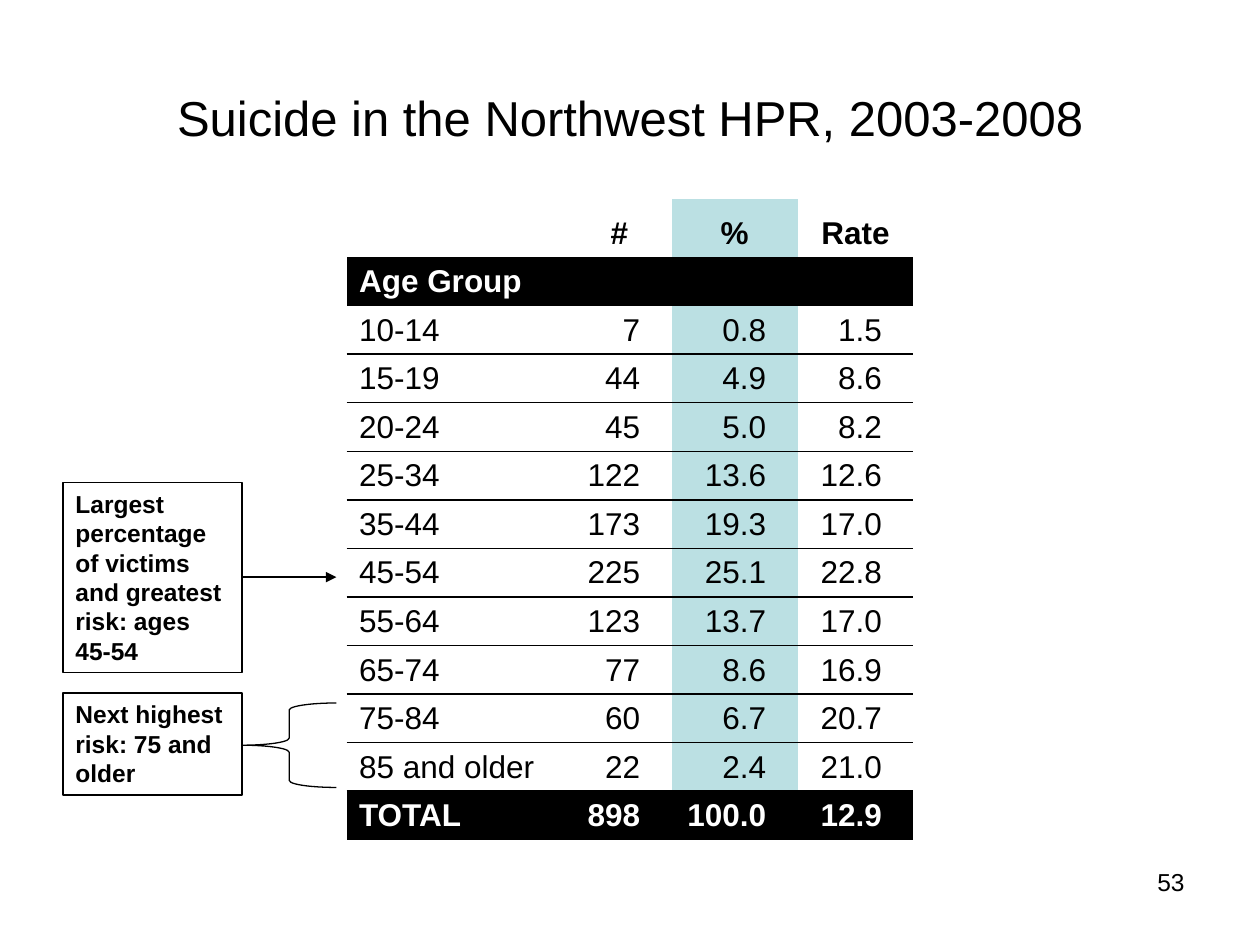
import pptx
import pptx.util
import pptx.dml.color
import pptx.enum.text
import pptx.enum.shapes
import pptx.oxml
import pptx.oxml.ns

Inches, Pt = pptx.util.Inches, pptx.util.Pt
ALIGN = pptx.enum.text.PP_ALIGN
ANCHOR = pptx.enum.text.MSO_ANCHOR
SHAPE = pptx.enum.shapes.MSO_SHAPE

COLORS = {"black": "000000", "white": "FFFFFF", "teal": "BBE0E3"}
FONT = "Arial"
NO_STYLE = "{2D5ABB26-0587-4C30-8999-92F81FD0307C}"

TITLE = "Suicide in the Northwest HPR, 2003-2008"
NUMBER = "53"
HEAD = ("", "#", "%", "Rate")
BAND = ("Age Group", "", "", "")
AGES = [
    ("10-14", "7", "0.8", "1.5"),
    ("15-19", "44", "4.9", "8.6"),
    ("20-24", "45", "5.0", "8.2"),
    ("25-34", "122", "13.6", "12.6"),
    ("35-44", "173", "19.3", "17.0"),
    ("45-54", "225", "25.1", "22.8"),
    ("55-64", "123", "13.7", "17.0"),
    ("65-74", "77", "8.6", "16.9"),
    ("75-84", "60", "6.7", "20.7"),
    ("85 and older", "22", "2.4", "21.0"),
]
TOTAL = ("TOTAL", "898", "100.0", "12.9")
NOTES = [
    ("Next highest risk: 75 and older", 5.5, 0.81),
    ("Largest percentage of victims and greatest risk: ages 45-54", 3.83, 1.51),
]
WIDTHS = (1.75, 0.83, 1, 0.92)
HEIGHTS = [0.46] + [0.3] * (len(AGES) + 1) + [0.36]
NOTE_X, NOTE_W = 0.5, 1.42
LINK_X, LINK_W = NOTE_X + NOTE_W, 0.75


def rgb(name):
    return pptx.dml.color.RGBColor.from_string(COLORS[name])


def write(frame, text, size, align=ALIGN.LEFT, bold=False, color="black", before=0):
    """Add one run; before is the space above as a share of a line."""
    par = frame.paragraphs[0]
    par.alignment = align
    if before:
        par._p.get_or_add_pPr().get_or_add_spcBef().set_spcPct(before)
    run = par.add_run()
    run.text = text
    font = run.font
    font.name, font.size, font.bold = FONT, Pt(size), bold
    font.color.rgb = rgb(color)
    return par


def label(slide, text, box, size, align, anchor):
    frame = slide.shapes.add_textbox(*map(Inches, box)).text_frame
    frame.word_wrap = True
    frame.vertical_anchor = anchor
    write(frame, text, size, align)


def outline(shape):
    shape.shadow.inherit = False
    shape.fill.background()
    shape.line.color.rgb = rgb("black")
    shape.line.width = Pt(0.75)


def border(cell, sides):
    """Rule the named sides in black and clear the others."""
    props = cell._tc.get_or_add_tcPr()
    for spot, side in enumerate("LRTB"):
        paint = (f'<a:solidFill><a:srgbClr val="{COLORS["black"]}"/></a:solidFill>'
                 if side in sides else "<a:noFill/>")
        props.insert(spot, pptx.oxml.parse_xml(
            f'<a:ln{side} {pptx.oxml.ns.nsdecls("a")} w="{Pt(1)}">{paint}</a:ln{side}>'))


def fill_cell(cell, text, row, col):
    head, band, total = row == 0, row == 1, row == len(HEIGHTS) - 1
    dark = band or total
    cell.vertical_anchor = ANCHOR.BOTTOM
    if dark or col == 2:
        cell.fill.solid()
        cell.fill.fore_color.rgb = rgb("black" if dark else "teal")
    else:
        cell.fill.background()
    border(cell, "" if head or band else "T" if total else "B" if row == 2 else "TB")
    align = ALIGN.LEFT
    if col:
        align = ALIGN.CENTER if head else ALIGN.RIGHT
        if not head and not band:
            cell.margin_right = Inches(0.25)
    if text:
        par = write(cell.text_frame, text, 18, align, head or dark,
                    "white" if dark else "black", 0.1)
        par.line_spacing = 0.95


def add_rates(slide):
    rows = [HEAD, BAND, *AGES, TOTAL]
    box = map(Inches, (2.75, 1.58, 4.5, 5.08))
    table = slide.shapes.add_table(len(rows), len(HEAD), *box).table
    table.first_row = table.horz_banding = False
    table._tbl.tblPr.find(pptx.oxml.ns.qn("a:tableStyleId")).text = NO_STYLE
    for col, width in zip(table.columns, WIDTHS):
        col.width = Inches(width)
    for row, height in zip(table.rows, HEIGHTS):
        row.height = Inches(height)
    table.cell(1, 0).merge(table.cell(1, len(HEAD) - 1))
    for r, row in enumerate(rows):
        for c, text in enumerate(row):
            fill_cell(table.cell(r, c), text, r, c)


def add_notes(slide):
    for text, top, height in NOTES:
        box = map(Inches, (NOTE_X, top, NOTE_W, height))
        note = slide.shapes.add_shape(SHAPE.RECTANGLE, *box)
        outline(note)
        frame = note.text_frame
        frame.word_wrap = True
        frame.vertical_anchor = ANCHOR.TOP
        write(frame, text, 14, bold=True, before=0.5)


def add_links(slide):
    ends = map(Inches, (LINK_X, 4.58, LINK_X + LINK_W, 4.58))
    arrow = slide.shapes.add_connector(
        pptx.enum.shapes.MSO_CONNECTOR.STRAIGHT, *ends)
    arrow.line.color.rgb = rgb("black")
    arrow.line.width = Pt(0.75)
    space = pptx.oxml.ns.nsdecls("a")
    arrow.line._get_or_add_ln().append(
        pptx.oxml.parse_xml(f'<a:tailEnd {space} type="triangle"/>'))
    arrow._element.spPr.append(pptx.oxml.parse_xml(f"<a:effectLst {space}/>"))
    box = map(Inches, (LINK_X, 5.58, LINK_W, 0.67))
    outline(slide.shapes.add_shape(SHAPE.LEFT_BRACE, *box))


def main():
    deck = pptx.Presentation()
    deck.slide_width, deck.slide_height = Inches(10), Inches(7.5)
    slide = deck.slides.add_slide(deck.slide_layouts[6])
    label(slide, NUMBER, (7.17, 6.83, 2.33, 0.52), 14, ALIGN.RIGHT, ANCHOR.TOP)
    label(slide, TITLE, (0.5, 0.3, 9, 1.25), 28, ALIGN.CENTER, ANCHOR.MIDDLE)
    add_rates(slide)
    add_notes(slide)
    add_links(slide)
    deck.save("out.pptx")


if __name__ == "__main__":
    main()
